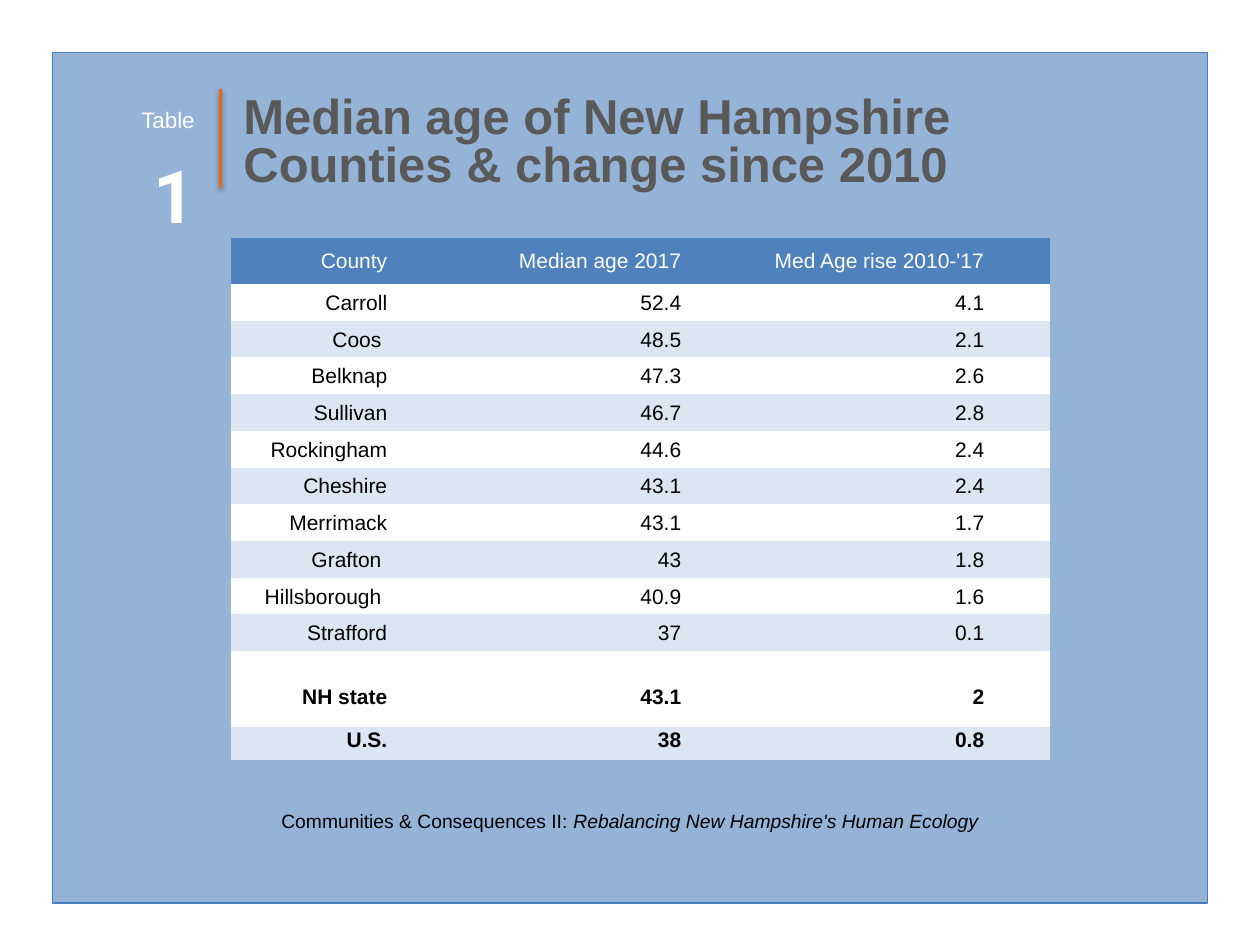
from lxml import etree
from pptx import Presentation
from pptx.dml.color import RGBColor
from pptx.enum.shapes import MSO_CONNECTOR, MSO_SHAPE
from pptx.enum.text import MSO_ANCHOR, MSO_AUTO_SIZE, PP_ALIGN
from pptx.oxml.ns import qn
from pptx.util import Inches, Pt

LEFT, CENTER, RIGHT = PP_ALIGN.LEFT, PP_ALIGN.CENTER, PP_ALIGN.RIGHT
TOP, MIDDLE = MSO_ANCHOR.TOP, MSO_ANCHOR.MIDDLE
NO_STYLE_NO_GRID = "{2D5ABB26-0587-4C30-8999-92F81FD0307C}"

WHITE, BLACK, GREY = "FFFFFF", "000000", "595959"
PANEL, PANEL_EDGE = "95B3D7", "4B7EBC"
HEADER, BAND, ORANGE = "4F81BD", "DCE6F2", "E46C0A"

# The slide is a grid of 24 columns by 18 rows
GRID_COLUMNS = 24

HEADINGS = ("County", "Median age 2017", "Med Age rise 2010-'17")
COUNTIES = (
    ("Carroll", "52.4", "4.1"),
    ("Coos ", "48.5", "2.1"),
    ("Belknap", "47.3", "2.6"),
    ("Sullivan", "46.7", "2.8"),
    ("Rockingham", "44.6", "2.4"),
    ("Cheshire", "43.1", "2.4"),
    ("Merrimack", "43.1", "1.7"),
    ("Grafton ", "43", "1.8"),
    ("Hillsborough ", "40.9", "1.6"),
    ("Strafford", "37", "0.1"),
)
STATE = ("NH state", "43.1", "2")
NATION = ("U.S.", "38", "0.8")
BLANK = ("", "", "")


def color(value):
    return RGBColor.from_string(value)


class SlideBuilder:
    """Holds the style and the current slide; lengths are grid units."""

    def __init__(self, presentation, font="Arial"):
        self.font = font
        self.unit = presentation.slide_width / GRID_COLUMNS
        self.slide = presentation.slides.add_slide(presentation.slide_layouts[6])

    def lengths(self, *values):
        return [round(value * self.unit) for value in values]

    def panel(self, place, fill, line):
        shape = self.slide.shapes.add_shape(MSO_SHAPE.RECTANGLE, *self.lengths(*place))
        shape.shadow.inherit = False
        shape.fill.solid()
        shape.fill.fore_color.rgb = color(fill)
        shape.line.color.rgb = color(line)
        shape.line.width = Pt(0.75)

    def run(self, paragraph, text, size, fill, bold=False, italic=False,
            font=None, baseline=None):
        run = paragraph.add_run()
        run.text = text
        run.font.name = font or self.font
        run.font.size = Pt(size)
        run.font.bold = bold
        run.font.italic = italic
        run.font.color.rgb = color(fill)
        if baseline:
            run.font._element.set("baseline", str(baseline * 1000))

    def text(self, place, align=CENTER, wrap=True):
        """Add a text box and return its first paragraph."""
        frame = self.slide.shapes.add_textbox(*self.lengths(*place)).text_frame
        frame.word_wrap = wrap
        frame.auto_size = MSO_AUTO_SIZE.SHAPE_TO_FIT_TEXT
        paragraph = frame.paragraphs[0]
        paragraph.alignment = align
        return paragraph

    def line(self, start, end, stroke, width):
        connector = self.slide.shapes.add_connector(
            MSO_CONNECTOR.STRAIGHT, *self.lengths(*start, *end))
        connector.line.color.rgb = color(stroke)
        connector.line.width = Pt(width)
        # Soft shadow straight below the line
        effects = etree.SubElement(connector._element.spPr, qn("a:effectLst"))
        shadow = etree.SubElement(
            effects, qn("a:outerShdw"), blurRad=str(Pt(3.1)), dist=str(Pt(1.6)),
            dir="5400000", rotWithShape="0")
        shade = etree.SubElement(shadow, qn("a:srgbClr"), val=BLACK)
        etree.SubElement(shade, qn("a:alpha"), val="38000")

    def cell(self, cell, text, fill, ink, bold, anchor, space_after):
        cell.margin_left = cell.margin_right = cell.margin_top = Inches(0.01)
        cell.margin_bottom = 0
        cell.vertical_anchor = anchor
        if fill:
            cell.fill.solid()
            cell.fill.fore_color.rgb = color(fill)
        else:
            cell.fill.background()
        paragraph = cell.text_frame.paragraphs[0]
        paragraph.alignment = RIGHT
        if text:
            paragraph.space_after = Pt(space_after)
            self.run(paragraph, text, 12, ink, bold)
        else:
            # Keeps an empty cell from growing its row
            etree.SubElement(paragraph._p, qn("a:endParaRPr"), sz="1200")

    def table(self, place, widths, rows):
        """Each row is (texts, height, fill, ink, bold, anchor, space after)."""
        frame = self.slide.shapes.add_table(
            len(rows), len(widths), *self.lengths(*place))
        table = frame.table
        table.first_row = table.horz_banding = False
        table._tbl.tblPr.find(qn("a:tableStyleId")).text = NO_STYLE_NO_GRID
        for column, width in zip(table.columns, self.lengths(*widths)):
            column.width = width
        for row, (texts, height, *style) in zip(table.rows, rows):
            row.height = self.lengths(height)[0]
            # The last column is an empty margin
            for cell, text in zip(row.cells, (*texts, "")):
                self.cell(cell, text, *style)


def main():
    presentation = Presentation()
    presentation.slide_width = Inches(10)
    presentation.slide_height = Inches(7.5)
    builder = SlideBuilder(presentation)

    # Background panel
    builder.panel((1, 1, 22, 16.2), PANEL, PANEL_EDGE)

    # Source caption
    caption = builder.text((1, 15.3, 22, 0.7))
    builder.run(caption, "Communities & Consequences II: ", 11, BLACK)
    builder.run(caption, "Rebalancing New Hampshire's Human Ecology", 11, BLACK,
                italic=True)

    # Title
    title = builder.text((4.4, 1.7, 14.1, 2.16), LEFT, wrap=False)
    title.line_spacing = Pt(27.8)
    title.space_after = Pt(60)
    builder.run(title, "Median age of New Hampshire", 28, GREY, bold=True)
    title.add_line_break()
    builder.run(title, "Counties & change since 2010", 28, GREY, bold=True)

    # Table of counties, banded from white
    rows = [(HEADINGS, 0.88, HEADER, WHITE, False, MIDDLE, 0)]
    for index, county in enumerate(COUNTIES):
        fill = BAND if index % 2 else WHITE
        rows.append((county, 0.7, fill, BLACK, False, MIDDLE, 18))
    rows += [
        (BLANK, 0.63, WHITE, BLACK, False, TOP, 0),
        (STATE, 0.82, WHITE, BLACK, True, TOP, 0),
        (NATION, 0.62, BAND, BLACK, True, TOP, 0),
        (BLANK, 0.62, None, BLACK, False, TOP, 0),
    ]
    builder.table((4.4, 4.53, 15.6, 10.6), (3, 5.6, 5.77, 1.23), rows)

    # Table number beside the title
    builder.line((4.2, 1.7), (4.2, 3.58), ORANGE, 2)
    number = builder.text((2.62, 1.82, 1.39, 2.18), wrap=False)
    builder.run(number, "1", 72, WHITE, bold=True, font="Roboto", baseline=3)
    label = builder.text((2.2, 1.7, 2, 0.84))
    builder.run(label, "Table", 22, WHITE, baseline=15)

    presentation.save("out.pptx")


if __name__ == "__main__":
    main()
